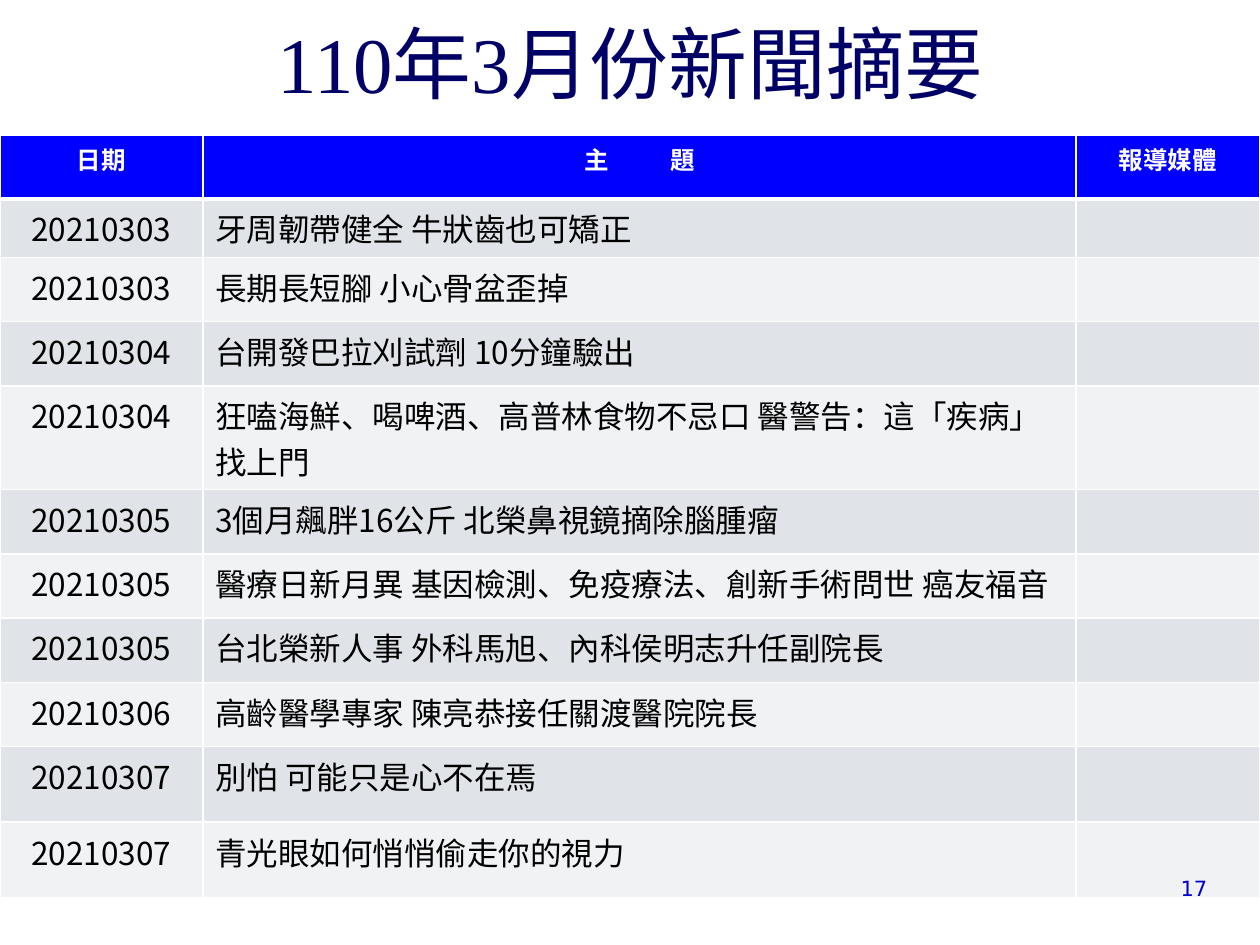
"""Build the monthly news summary slide with its table of headlines."""
from dataclasses import dataclass
from typing import NamedTuple

import pptx
import pptx.dml.color
import pptx.enum.text
import pptx.oxml
import pptx.oxml.ns
import pptx.util

Inches = pptx.util.Inches
Align = pptx.enum.text.PP_ALIGN
Anchor = pptx.enum.text.MSO_ANCHOR


class TextStyle(NamedTuple):
    font: str
    size: int
    color: str
    bold: bool = False


@dataclass(frozen=True)
class Theme:
    title: TextStyle = TextStyle("Times New Roman", 45, "000066")
    heading: TextStyle = TextStyle("Noto Sans CJK SC", 14, "FFFFFF", True)
    body: TextStyle = TextStyle("Noto Sans CJK SC", 18, "000000")
    page: TextStyle = TextStyle("DejaVu Sans", 12, "0000CC")
    east_asian: str = "Noto Sans CJK SC"
    heading_fill: str = "0000FF"
    bands: tuple[str, str] = ("E0E4E9", "F0F2F4")
    border: str = "FFFFFF"
    thin: int = 1
    thick: int = 3
    heading_gap: int = 16


@dataclass(frozen=True)
class News:
    date: str
    topic: str
    height: float = 0.51
    media: str = ""


THEME = Theme()
HEADINGS = ("日期", "主 題", "報導媒體")
COLUMN_WIDTHS = (1.61, 6.93, 1.46)
HEADING_HEIGHT = 0.51
NEWS = (
    News("20210303", "牙周韌帶健全 牛狀齒也可矯正", 0.35),
    News("20210303", "長期長短腳 小心骨盆歪掉"),
    News("20210304", "台開發巴拉刈試劑 10分鐘驗出"),
    News("20210304", "狂嗑海鮮、喝啤酒、高普林食物不忌口 醫警告：這「疾病」找上門"),
    News("20210305", "3個月飆胖16公斤 北榮鼻視鏡摘除腦腫瘤"),
    News("20210305", "醫療日新月異 基因檢測、免疫療法、創新手術問世 癌友福音"),
    News("20210305", "台北榮新人事 外科馬旭、內科侯明志升任副院長"),
    News("20210306", "高齡醫學專家 陳亮恭接任關渡醫院院長"),
    News("20210307", "別怕 可能只是心不在焉", 0.6),
    News("20210307", "青光眼如何悄悄偷走你的視力", 0.6),
)


def rgb(color: str) -> pptx.dml.color.RGBColor:
    """Turn a hex string into a colour."""
    return pptx.dml.color.RGBColor.from_string(color)


def write(frame, text: str, style: TextStyle, align) -> None:
    """Put one styled paragraph into a text frame."""
    frame.text = text
    paragraph = frame.paragraphs[0]
    paragraph.alignment = align
    for run in paragraph.runs:
        run.font.size = pptx.util.Pt(style.size)
        run.font.bold = style.bold
        run.font.color.rgb = rgb(style.color)
        run.font.name = style.font
        east_asian = pptx.oxml.parse_xml(
            f'<a:ea {pptx.oxml.ns.nsdecls("a")} typeface="{THEME.east_asian}"/>')
        run.font._element.append(east_asian)


def draw_borders(cell, top: int, bottom: int) -> None:
    """Give a cell its four border lines."""
    widths = {"L": THEME.thin, "R": THEME.thin, "T": top, "B": bottom}
    for side, width in widths.items():
        cell._tc.get_or_add_tcPr().append(pptx.oxml.parse_xml(
            f'<a:ln{side} {pptx.oxml.ns.nsdecls("a")} w="{pptx.util.Pt(width)}">'
            f'<a:solidFill><a:srgbClr val="{THEME.border}"/></a:solidFill>'
            f'</a:ln{side}>'))


def draw_cell(cell, text: str, style: TextStyle, align, fill: str,
              top: int, bottom: int) -> None:
    """Fill, border and write one table cell."""
    draw_borders(cell, top, bottom)
    cell.fill.solid()
    cell.fill.fore_color.rgb = rgb(fill)
    write(cell.text_frame, text, style, align)


def draw_news_table(slide) -> None:
    """Draw the heading row and one banded row per news item."""
    heights = (HEADING_HEIGHT, *(item.height for item in NEWS))
    table = slide.shapes.add_table(
        len(heights), len(HEADINGS), 0, Inches(1.07),
        Inches(sum(COLUMN_WIDTHS)), Inches(sum(heights))).table
    for column, width in zip(table.columns, COLUMN_WIDTHS):
        column.width = Inches(width)
    for row, height in zip(table.rows, heights):
        row.height = Inches(height)
    for column, heading in enumerate(HEADINGS):
        draw_cell(table.cell(0, column), heading, THEME.heading, Align.CENTER,
                  THEME.heading_fill, THEME.thin, THEME.thick)
    topic_heading = table.cell(0, 1).text_frame.paragraphs[0].runs[0]
    topic_heading.font._element.set("spc", str(THEME.heading_gap * 100))
    for row, item in enumerate(NEWS, start=1):
        fill = THEME.bands[(row - 1) % 2]
        top = THEME.thick if row == 1 else THEME.thin
        for column, text in enumerate((item.date, item.topic, item.media)):
            align = Align.LEFT if column == 1 else Align.CENTER
            draw_cell(table.cell(row, column), text, THEME.body, align,
                      fill, top, THEME.thin)


def draw_title(slide) -> None:
    """Place and write the slide title."""
    title = slide.shapes.title
    title.left, title.top = Inches(0.63), Inches(0.34)
    title.width, title.height = Inches(8.75), Inches(0.58)
    title.text_frame.auto_size = pptx.enum.text.MSO_AUTO_SIZE.NONE
    title.text_frame.vertical_anchor = Anchor.BOTTOM
    write(title.text_frame, "110年3月份新聞摘要", THEME.title, Align.CENTER)


def draw_page_number(slide) -> None:
    """Write the page number at the lower right."""
    page = slide.shapes.add_textbox(
        Inches(8.94), Inches(6.9), Inches(0.74), Inches(0.3))
    page.text_frame.word_wrap = True
    write(page.text_frame, "17", THEME.page, Align.RIGHT)


def main() -> None:
    """Create the presentation and save it."""
    presentation = pptx.Presentation()
    presentation.slide_width = Inches(10)
    presentation.slide_height = Inches(7.5)
    slide = presentation.slides.add_slide(presentation.slide_layouts[5])
    draw_title(slide)
    draw_news_table(slide)
    draw_page_number(slide)
    presentation.save("out.pptx")


if __name__ == "__main__":
    main()
